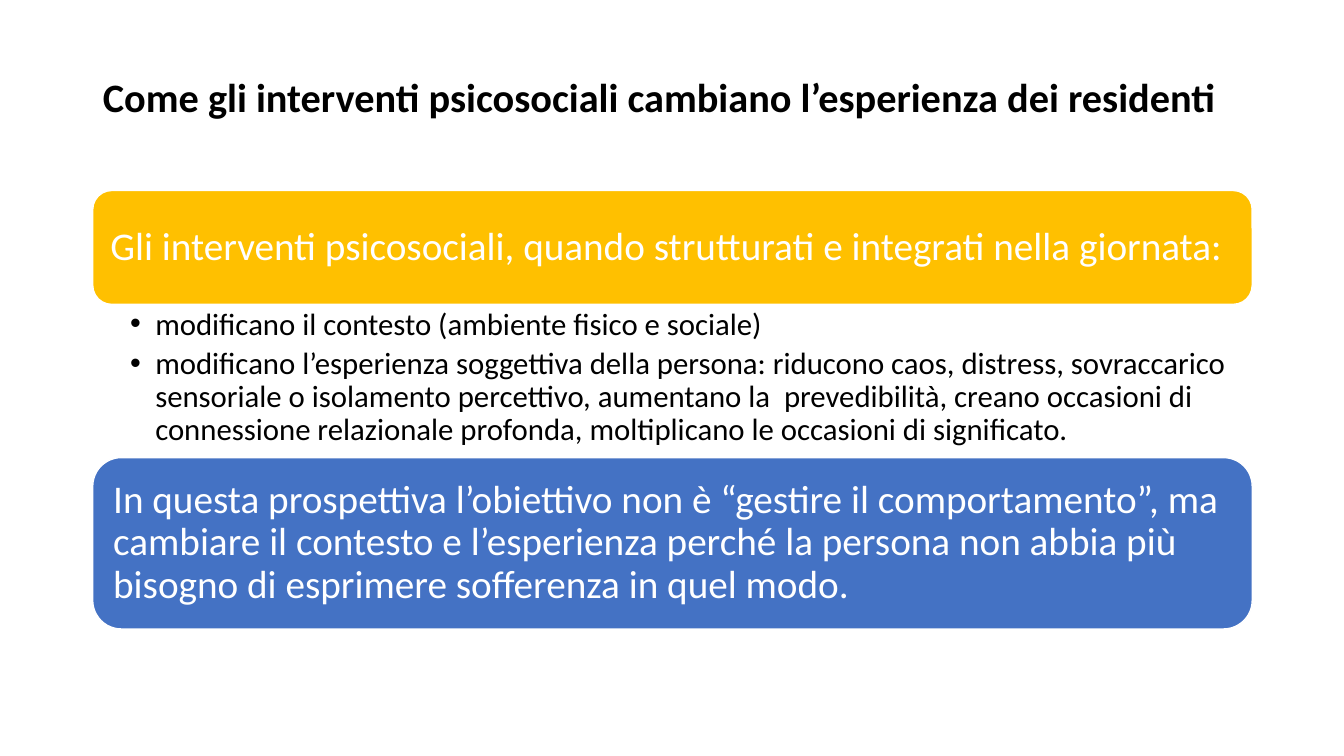
from dataclasses import dataclass

from lxml import etree
from pptx import Presentation
from pptx.dml.color import RGBColor
from pptx.enum.shapes import MSO_SHAPE as Shape
from pptx.enum.text import MSO_ANCHOR as Anchor, MSO_AUTO_SIZE as AutoSize, PP_ALIGN as Align
from pptx.oxml.ns import qn
from pptx.util import Inches, Pt


@dataclass(frozen=True)
class Theme:
    """Colours, font and type sizes of the slide."""
    font: str = "Calibri"
    dark: RGBColor = RGBColor(0, 0, 0)
    light: RGBColor = RGBColor(255, 255, 255)
    gold: RGBColor = RGBColor(255, 192, 0)
    blue: RGBColor = RGBColor(68, 114, 196)
    title: float = 28.8
    panel: float = 28
    bullet: float = 22


THEME = Theme()
LEFT, WIDTH = 0.92, 11.5
TITLE = "Come gli interventi psicosociali cambiano l’esperienza dei residenti"
PREMISE = "Gli interventi psicosociali, quando strutturati e integrati nella giornata:"
EFFECTS = [
    "modificano il contesto (ambiente fisico e sociale)",
    "modificano l’esperienza soggettiva della persona: riducono caos, distress, "
    "sovraccarico sensoriale o isolamento percettivo, aumentano la  prevedibilità, "
    "creano occasioni di connessione relazionale profonda, moltiplicano le occasioni "
    "di significato.",
]
CONCLUSION = (
    "In questa prospettiva l’obiettivo non è “gestire il comportamento”, ma cambiare "
    "il contesto e l’esperienza perché la persona non abbia più bisogno di esprimere "
    "sofferenza in quel modo."
)


def place(shape, top, height):
    """Move a shape to its band of the content column."""
    shape.left, shape.top = Inches(LEFT), Inches(top)
    shape.width, shape.height = Inches(WIDTH), Inches(height)


def set_frame(frame, anchor, left, top, right, bottom):
    """Set wrapping, anchor and insets of a text frame."""
    frame.word_wrap = True
    frame.auto_size = AutoSize.NONE
    frame.vertical_anchor = anchor
    frame.margin_left, frame.margin_top = Inches(left), Inches(top)
    frame.margin_right, frame.margin_bottom = Inches(right), Inches(bottom)


def format_para(para, size, colour, bold=False, after=0):
    """Apply the shared paragraph spacing and format its runs."""
    para.alignment = Align.LEFT
    para.line_spacing = 0.9
    para.space_before, para.space_after = Pt(0), Pt(after)
    for span in para.runs:
        span.font.name, span.font.size = THEME.font, Pt(size)
        span.font.bold, span.font.color.rgb = bold, colour


def add_bullet(para):
    """Give a paragraph a round bullet with a hanging indent."""
    properties = para._p.get_or_add_pPr()
    properties.set("marL", str(Inches(0.25)))
    properties.set("indent", str(-Inches(0.25)))
    etree.SubElement(properties, qn("a:buFont")).set("typeface", "Arial")
    etree.SubElement(properties, qn("a:buChar")).set("char", "•")


def fill_title(page, top, height):
    """Write the slide title in its placeholder."""
    title = page.shapes.title
    place(title, top, height)
    title.text_frame.text = TITLE
    set_frame(title.text_frame, Anchor.MIDDLE, 0.1, 0.05, 0.1, 0.05)
    format_para(title.text_frame.paragraphs[0], THEME.title, THEME.dark, bold=True)


def add_panel(page, top, height, text, colour):
    """Add a rounded panel holding one statement."""
    panel = page.shapes.add_shape(
        Shape.ROUNDED_RECTANGLE, Inches(LEFT), Inches(top), Inches(WIDTH), Inches(height))
    panel.shadow.inherit = False
    panel.fill.solid()
    panel.fill.fore_color.rgb = colour
    panel.line.color.rgb, panel.line.width = THEME.light, Pt(1)
    panel.text_frame.text = text
    set_frame(panel.text_frame, Anchor.MIDDLE, 0.12, 0.12, 0.12, 0.12)
    format_para(panel.text_frame.paragraphs[0], THEME.panel, THEME.light)


def fill_effects(page, top, height):
    """Write the bulleted effects in the body placeholder."""
    body = page.placeholders[1]
    place(body, top, height)
    body.text_frame.text = "\n".join(EFFECTS)
    set_frame(body.text_frame, Anchor.TOP, 0.37, 0.04, 0.22, 0.04)
    for para in body.text_frame.paragraphs:
        para.level = 1
        add_bullet(para)
        format_para(para, THEME.bullet, THEME.dark, after=THEME.bullet * 0.2)


def main():
    """Build and save the deck."""
    deck = Presentation()
    deck.slide_width, deck.slide_height = Inches(13.33), Inches(7.5)
    page = deck.slides.add_slide(deck.slide_layouts[1])
    fill_title(page, 0.48, 1.01)
    top, premise, effects, conclusion = 1.89, 1.13, 1.52, 1.7
    add_panel(page, top, premise, PREMISE, THEME.gold)
    fill_effects(page, top + premise, effects)
    add_panel(page, top + premise + effects, conclusion, CONCLUSION, THEME.blue)
    deck.save("out.pptx")


if __name__ == "__main__":
    main()
